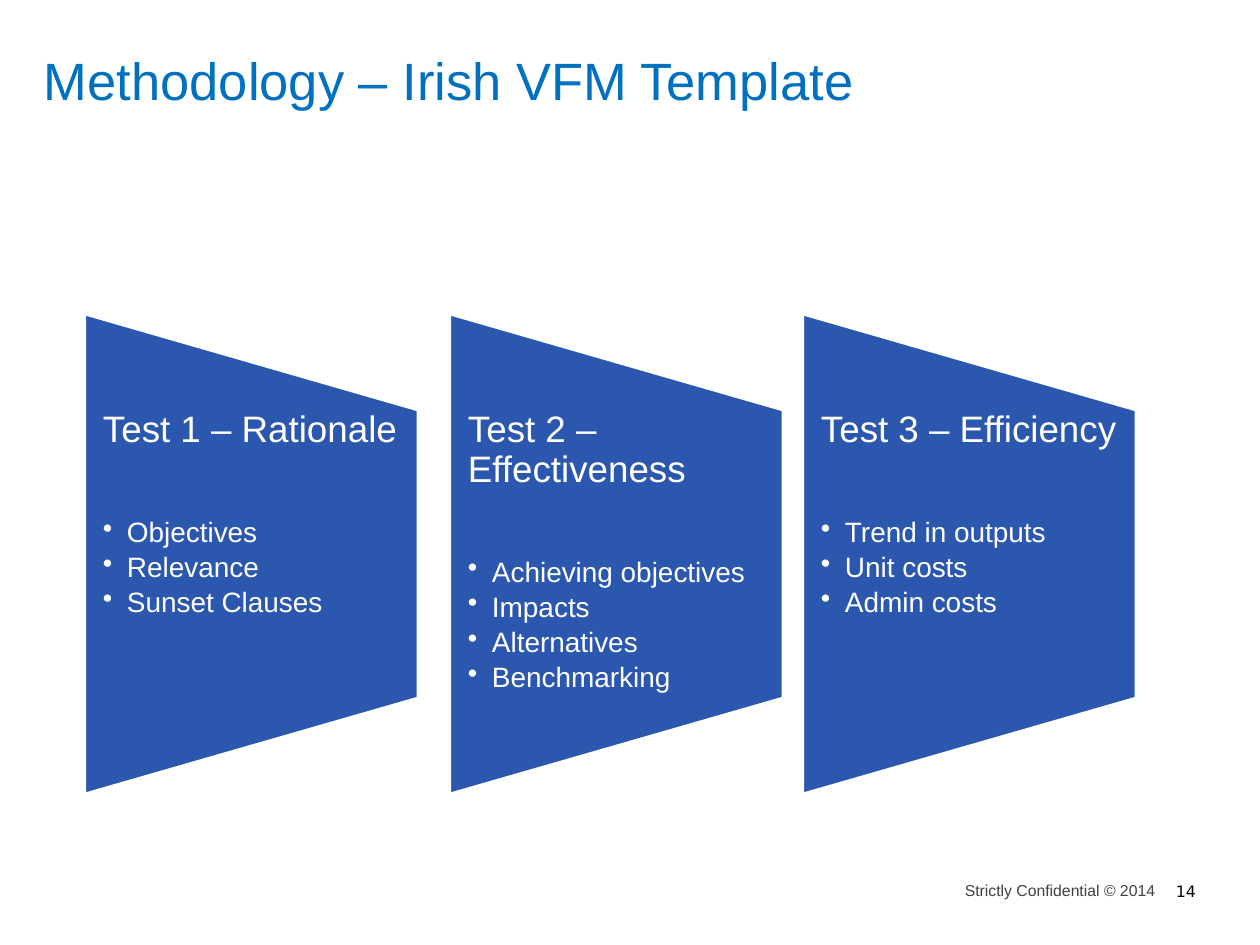
"""Build the methodology slide with its three value-for-money tests."""
from dataclasses import dataclass

from lxml import etree
from pptx import Presentation
from pptx.dml.color import RGBColor
from pptx.enum.shapes import MSO_SHAPE
from pptx.enum.text import MSO_ANCHOR, PP_ALIGN
from pptx.oxml.ns import qn
from pptx.util import Emu, Pt

PANEL_SHAPE = MSO_SHAPE.FLOWCHART_MANUAL_OPERATION
TOP, BOTTOM = MSO_ANCHOR.TOP, MSO_ANCHOR.BOTTOM
LEFT, RIGHT = PP_ALIGN.LEFT, PP_ALIGN.RIGHT
EMU_PER_PX = 914400 / 126

PANEL_WIDTH, PANEL_HEIGHT, PANEL_TOP = 334, 481, 314
TEXT_TOP, TEXT_HEIGHT, TEXT_INSET = 411, 288, 19
BULLET_INDENT = 24

TESTS = [
    (84, "Test 1 – Rationale", ["Objectives", "Relevance", "Sunset Clauses"]),
    (449, "Test 2 – Effectiveness",
     ["Achieving objectives", "Impacts", "Alternatives", "Benchmarking"]),
    (802, "Test 3 – Efficiency", ["Trend in outputs", "Unit costs", "Admin costs"]),
]


@dataclass(frozen=True)
class Theme:
    """Colours, fonts and type sizes of the slide."""
    title: str = "0070C0"
    panel: str = "2C57AE"
    light: str = "FFFFFF"
    footer: str = "404040"
    number: str = "000000"
    font: str = "Arial"
    number_font: str = "DejaVu Sans"
    title_size: int = 30
    heading_size: int = 21
    bullet_size: int = 16
    footer_size: int = 9


THEME = Theme()


def px(length):
    """Turn pixels into EMU."""
    return Emu(round(length * EMU_PER_PX))


def set_font(paragraph, size, colour, name=THEME.font):
    """Set the font of a whole paragraph."""
    paragraph.font.size = Pt(size)
    paragraph.font.name = name
    paragraph.font.color.rgb = RGBColor.from_string(colour)


def add_frame(slide, box, insets=(0, 0, 0, 0), anchor=TOP):
    """Add a wrapping text box and return its text frame."""
    frame = slide.shapes.add_textbox(*map(px, box)).text_frame
    frame.word_wrap = True
    frame.vertical_anchor = anchor
    (frame.margin_left, frame.margin_top,
     frame.margin_right, frame.margin_bottom) = map(px, insets)
    return frame


def add_label(slide, box, text, size, colour, name=THEME.font,
              insets=(0, 5, 0, 0), align=LEFT, anchor=TOP):
    """Add a one-line text box."""
    line = add_frame(slide, box, insets, anchor).paragraphs[0]
    line.text = text
    line.alignment = align
    set_font(line, size, colour, name)


def add_bullet(frame, text):
    """Append a bulleted paragraph."""
    bullet = frame.add_paragraph()
    bullet.text = text
    bullet.level = 1
    properties = bullet._p.get_or_add_pPr()
    properties.set("marL", str(px(BULLET_INDENT)))
    properties.set("indent", str(-px(BULLET_INDENT)))
    etree.SubElement(properties, qn("a:buChar")).set("char", "•")
    bullet.line_spacing = 0.9
    bullet.space_after = Pt(2.8)
    set_font(bullet, THEME.bullet_size, THEME.light)


def add_panel(slide, left):
    """Add a trapezoid turned so that it narrows to the right."""
    shift = (PANEL_HEIGHT - PANEL_WIDTH) // 2
    panel = slide.shapes.add_shape(
        PANEL_SHAPE, px(left - shift), px(PANEL_TOP + shift),
        px(PANEL_HEIGHT), px(PANEL_WIDTH))
    panel.rotation = 270
    panel.shadow.inherit = False
    panel.fill.solid()
    panel.fill.fore_color.rgb = RGBColor.from_string(THEME.panel)
    panel.line.color.rgb = RGBColor.from_string(THEME.light)
    panel.line.width = Pt(2)


def add_test(slide, left, heading, bullets):
    """Add one test: its panel, heading and bullets."""
    add_panel(slide, left)
    frame = add_frame(slide, (left, TEXT_TOP, PANEL_WIDTH, TEXT_HEIGHT),
                      (TEXT_INSET, 0, TEXT_INSET, 0))
    title = frame.paragraphs[0]
    title.text = heading
    title.line_spacing = 0.9
    title.space_after = Pt(38.6)
    set_font(title, THEME.heading_size, THEME.light)
    for bullet in bullets:
        add_bullet(frame, bullet)


def main():
    """Build and save the slide."""
    presentation = Presentation()
    presentation.slide_width, presentation.slide_height = px(1260), px(945)
    slide = presentation.slides.add_slide(presentation.slide_layouts[6])
    add_label(slide, (956, 876, 199, 30), "Strictly Confidential © 2014",
              THEME.footer_size, THEME.footer, align=RIGHT)
    add_label(slide, (44, 35, 1171, 79), "Methodology – Irish VFM Template",
              THEME.title_size, THEME.title, insets=(0, 0, 0, 3), anchor=BOTTOM)
    add_label(slide, (1176, 877, 39, 30), "14", THEME.footer_size,
              THEME.number, THEME.number_font)
    for left, heading, bullets in TESTS:
        add_test(slide, left, heading, bullets)
    presentation.save("out.pptx")


if __name__ == "__main__":
    main()
